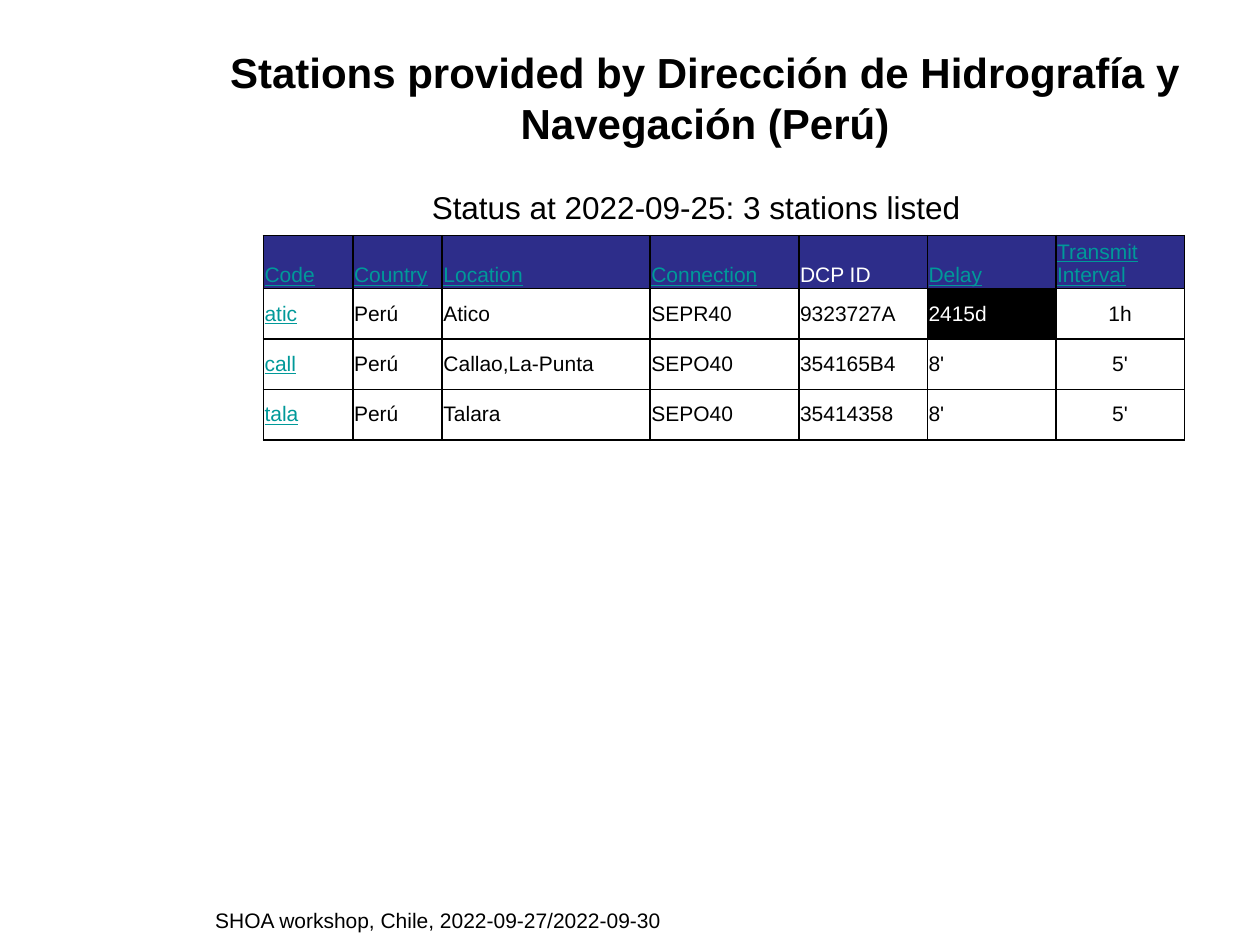
from lxml import etree
from pptx import Presentation
from pptx.dml.color import RGBColor
from pptx.enum import text
from pptx.oxml.ns import qn
from pptx.util import Inches, Pt

BLACK = RGBColor(0x00, 0x00, 0x00)
WHITE = RGBColor(0xFF, 0xFF, 0xFF)
NAVY = RGBColor(0x2D, 0x2D, 0x8A)
TEAL = RGBColor(0x00, 0x99, 0x99)
FONT = "Arial"

HEADERS = ["Code", "Country", "Location", "Connection", "DCP ID", "Delay",
           "Transmit\vInterval"]
STATIONS = [
    ["atic", "Perú", "Atico", "SEPR40", "9323727A", "2415d", "1h"],
    ["call", "Perú", "Callao,La-Punta", "SEPO40", "354165B4", "8'", "5'"],
    ["tala", "Perú", "Talara", "SEPO40", "35414358", "8'", "5'"],
]
COLUMN_WIDTHS = [0.71, 0.71, 1.65, 1.18, 1.02, 1.02, 1.02]
ROW_HEIGHTS = [0.41, 0.4, 0.4, 0.4]
CODE, DCP_ID, DELAY, INTERVAL = 0, 4, 5, 6


def style(paragraph, size, color=BLACK, bold=False, underline=False):
    for run in paragraph.runs:
        font = run.font
        font.name, font.size = FONT, Pt(size)
        font.bold, font.underline = bold, underline
        font.color.rgb = color


def add_border(cell):
    properties = cell._tc.get_or_add_tcPr()
    for position, side in enumerate(("a:lnL", "a:lnR", "a:lnT", "a:lnB")):
        line = etree.Element(qn(side), w=str(Pt(1)))
        fill = etree.SubElement(line, qn("a:solidFill"))
        etree.SubElement(fill, qn("a:srgbClr"), val=str(BLACK))
        properties.insert(position, line)


def add_title(slide, left, top, width, height):
    frame = slide.shapes.add_textbox(left, top, width, height).text_frame
    frame.word_wrap = True
    frame.vertical_anchor = text.MSO_ANCHOR.MIDDLE
    heading = frame.paragraphs[0]
    heading.text = "Stations provided by Dirección de Hidrografía y Navegación (Perú)"
    status = frame.add_paragraph()
    status.text = "Status at 2022-09-25: 3 stations listed"
    status.space_before = Pt(23)
    # The status line sits slightly left of the heading's centre
    status._p.get_or_add_pPr().set("marR", str(Inches(0.14)))
    for paragraph, size, bold in ((heading, 24, True), (status, 18, False)):
        paragraph.alignment = text.PP_ALIGN.CENTER
        style(paragraph, size, bold=bold)


def cell_colors(row, column, value):
    """Return the fill, the text colour and whether the text looks like a link."""
    if row == 0:
        linked = column != DCP_ID
        return NAVY, TEAL if linked else WHITE, linked
    if column == CODE:
        return WHITE, TEAL, True
    if column == DELAY and value.endswith("d"):  # silent for days
        return BLACK, WHITE, False
    return WHITE, BLACK, False


def add_station_table(slide, left, top, width, height):
    rows = [HEADERS] + STATIONS
    table = slide.shapes.add_table(len(rows), len(HEADERS), left, top,
                                   width, height).table
    for column, column_width in zip(table.columns, COLUMN_WIDTHS):
        column.width = Inches(column_width)
    for r, values in enumerate(rows):
        table.rows[r].height = Inches(ROW_HEIGHTS[r])
        for c, value in enumerate(values):
            cell = table.cell(r, c)
            fill, color, linked = cell_colors(r, c, value)
            cell.text = value
            cell.margin_left = cell.margin_right = Inches(0.01)
            cell.margin_top = cell.margin_bottom = Inches(0.01)
            cell.vertical_anchor = (text.MSO_ANCHOR.MIDDLE if r
                                    else text.MSO_ANCHOR.BOTTOM)
            cell.fill.solid()
            cell.fill.fore_color.rgb = fill
            add_border(cell)
            paragraph = cell.text_frame.paragraphs[0]
            if r and c == INTERVAL:
                paragraph.alignment = text.PP_ALIGN.CENTER
            style(paragraph, 12, color, underline=linked)


def add_footer(slide, left, top, width, height):
    frame = slide.shapes.add_textbox(left, top, width, height).text_frame
    frame.word_wrap = False
    frame.auto_size = text.MSO_AUTO_SIZE.SHAPE_TO_FIT_TEXT
    frame.text = "SHOA workshop, Chile, 2022-09-27/2022-09-30"
    style(frame.paragraphs[0], 12)


def main():
    deck = Presentation()
    deck.slide_width, deck.slide_height = Inches(10), Inches(7.5)
    slide = deck.slides.add_slide(deck.slide_layouts[6])
    add_footer(slide, Inches(1.61), Inches(7.15), Inches(3.76), Inches(0.3))
    add_title(slide, Inches(1.69), Inches(0.3), Inches(7.81), Inches(1.56))
    add_station_table(slide, Inches(2.09), Inches(1.87),
                      Inches(sum(COLUMN_WIDTHS)), Inches(sum(ROW_HEIGHTS)))
    deck.save("out.pptx")


if __name__ == "__main__":
    main()
